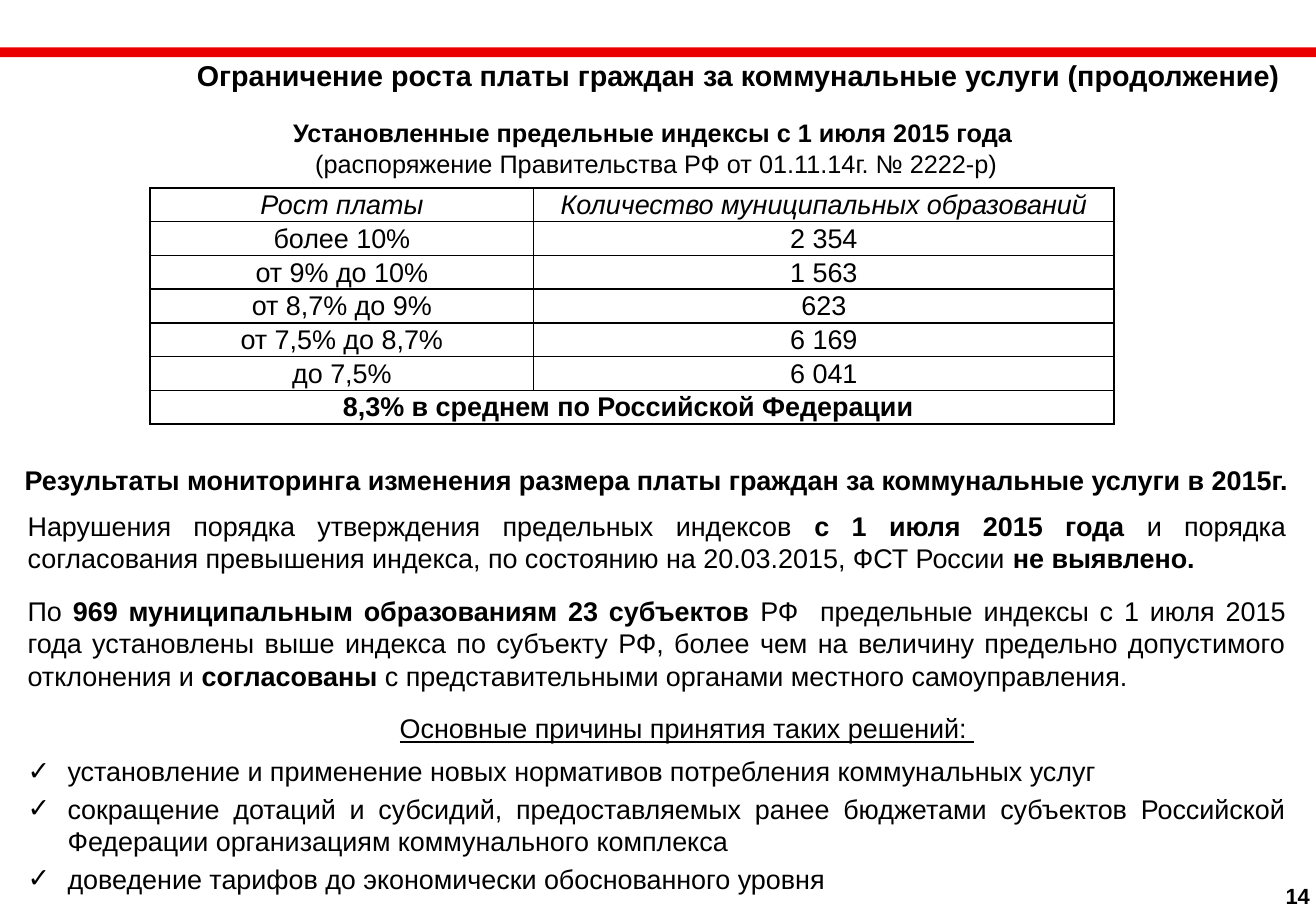
import pptx
import pptx.util
import pptx.dml.color
import pptx.enum.shapes
import pptx.enum.text
import pptx.oxml
import pptx.oxml.ns

Pt = pptx.util.Pt
ALIGN = pptx.enum.text.PP_ALIGN
COLORS = {"stripe": "EB0000", "ink": "000000", "paper": "FFFFFF"}
FONT = "Arial"
BODY_SIZE = 16
SLIDE_WIDTH, SLIDE_HEIGHT = 780.48, 540

INDEX_ROWS = [
    ("Рост платы", "Количество муниципальных образований"),
    ("более 10%", "2 354"),
    ("от 9% до 10%", "1 563"),
    ("от 8,7% до 9%", "623"),
    ("от 7,5% до 8,7%", "6 169"),
    ("до 7,5%", "6 041"),
    ("*8,3% в среднем по Российской Федерации *", ""),
]
FINDINGS = [
    "Нарушения порядка утверждения предельных индексов* с 1 июля 2015 года* и порядка "
    "согласования превышения индекса, по состоянию на 20.03.2015, ФСТ России *не выявлено.*",
    "По *969 муниципальным образованиям 23 субъектов* РФ  предельные индексы с 1 июля 2015 года "
    "установлены выше индекса по субъекту РФ, более чем на величину предельно допустимого "
    "отклонения и *согласованы* с представительными органами местного самоуправления.",
]
REASONS_HEADING = "Основные причины принятия таких решений: "
REASONS = [
    "установление и применение новых нормативов потребления коммунальных услуг",
    "сокращение дотаций и субсидий, предоставляемых ранее бюджетами субъектов "
    "Российской Федерации организациям коммунального комплекса",
    "доведение тарифов до экономически обоснованного уровня",
]


def rgb(name):
    return pptx.dml.color.RGBColor.from_string(COLORS[name])


def write(paragraph, marked_text, size, align=ALIGN.CENTER, after=0, italic=False, underline=False):
    paragraph.alignment = align
    paragraph.space_after = Pt(after)
    for position, piece in enumerate(marked_text.split("*")):
        if not piece:
            continue
        run = paragraph.add_run()
        run.text = piece
        font = run.font
        font.name, font.size = FONT, Pt(size)
        font.bold, font.italic, font.underline = position % 2 == 1, italic, underline
        font.color.rgb = rgb("ink")


def add_frame(slide, box, wrap=True):
    frame = slide.shapes.add_textbox(*map(Pt, box)).text_frame
    frame.word_wrap = wrap
    return frame


def add_heading(slide, box, lines, size, wrap=True):
    frame = add_frame(slide, box, wrap)
    for number, line in enumerate(lines):
        paragraph = frame.add_paragraph() if number else frame.paragraphs[0]
        write(paragraph, line, size)


def add_stripe(slide, box):
    stripe = slide.shapes.add_shape(pptx.enum.shapes.MSO_SHAPE.RECTANGLE, *map(Pt, box))
    stripe.shadow.inherit = False
    stripe.fill.solid()
    stripe.fill.fore_color.rgb = rgb("stripe")
    stripe.line.fill.background()


def add_borders(cell):
    properties = cell._tc.get_or_add_tcPr()
    for side in ("lnL", "lnR", "lnT", "lnB"):
        properties.append(pptx.oxml.parse_xml(
            f'<a:{side} {pptx.oxml.ns.nsdecls("a")} w="{Pt(1)}"><a:solidFill>'
            f'<a:srgbClr val="{COLORS["ink"]}"/></a:solidFill></a:{side}>'))


def add_index_table(slide, box, first_share):
    width, height = box[2:]
    table = slide.shapes.add_table(len(INDEX_ROWS), 2, *map(Pt, box)).table
    table.first_row = table.horz_banding = False
    for column, share in zip(table.columns, (first_share, 1 - first_share)):
        column.width = Pt(width * share)
    for row_number, texts in enumerate(INDEX_ROWS):
        table.rows[row_number].height = Pt(height / len(INDEX_ROWS))
        for column_number, text in enumerate(texts):
            cell = table.cell(row_number, column_number)
            cell.margin_left = cell.margin_right = cell.margin_top = Pt(0.7)
            cell.margin_bottom = 0
            cell.vertical_anchor = pptx.enum.text.MSO_ANCHOR.MIDDLE
            add_borders(cell)
            cell.fill.background()
            write(cell.text_frame.paragraphs[0], text, BODY_SIZE, italic=row_number == 0)
    average_row = len(INDEX_ROWS) - 1
    table.cell(average_row, 0).merge(table.cell(average_row, 1))


def add_check_mark(paragraph, indent):
    properties = paragraph._p.get_or_add_pPr()
    properties.set("marL", str(Pt(indent)))
    properties.set("indent", str(-Pt(indent)))
    for bullet_part in (f'buFont {{}} typeface="{FONT}"', 'buChar {} char="✓"'):
        properties.append(pptx.oxml.parse_xml(
            f'<a:{bullet_part.format(pptx.oxml.ns.nsdecls("a"))}/>'))


def add_findings(slide, box):
    frame = add_frame(slide, box)
    for number, finding in enumerate(FINDINGS):
        paragraph = frame.add_paragraph() if number else frame.paragraphs[0]
        write(paragraph, finding, BODY_SIZE, ALIGN.JUSTIFY, after=12)
    reasons_heading = frame.add_paragraph()
    reasons_heading._p.get_or_add_pPr().set("marL", str(Pt(36)))
    write(reasons_heading, REASONS_HEADING, BODY_SIZE, after=6.3, underline=True)
    for reason in REASONS:
        paragraph = frame.add_paragraph()
        add_check_mark(paragraph, 23.7)
        write(paragraph, reason, BODY_SIZE, ALIGN.JUSTIFY, after=3.1)


def build_slide(deck):
    slide = deck.slides.add_slide(deck.slide_layouts[6])
    slide.background.fill.solid()
    slide.background.fill.fore_color.rgb = rgb("paper")
    add_stripe(slide, (0, 28.1, SLIDE_WIDTH, 5.8))
    add_heading(slide, (80, 30.5, 716, 28),
                ["*Ограничение роста платы граждан за коммунальные услуги (продолжение)*"], 17)
    add_heading(slide, (4.5, 271, 770, 22),
                ["*Результаты мониторинга изменения размера платы граждан за коммунальные услуги в 2015г.*"],
                BODY_SIZE)
    add_findings(slide, (9.3, 298.4, 760.5, 231))
    add_index_table(slide, (89, 111.4, 571.7, 140), 0.398)
    add_heading(slide, (33.3, 66.1, 712, 44),
                ["*Установленные предельные индексы с 1 июля 2015 года *",
                 "(распоряжение Правительства РФ от 01.11.14г. № 2222-р)"], 15)
    add_heading(slide, (754.9, 519.3, 29.5, 23), ["*14*"], 13, wrap=False)


def main():
    deck = pptx.Presentation()
    deck.slide_width = Pt(SLIDE_WIDTH)
    deck.slide_height = Pt(SLIDE_HEIGHT)
    build_slide(deck)
    deck.save("out.pptx")


if __name__ == "__main__":
    main()
